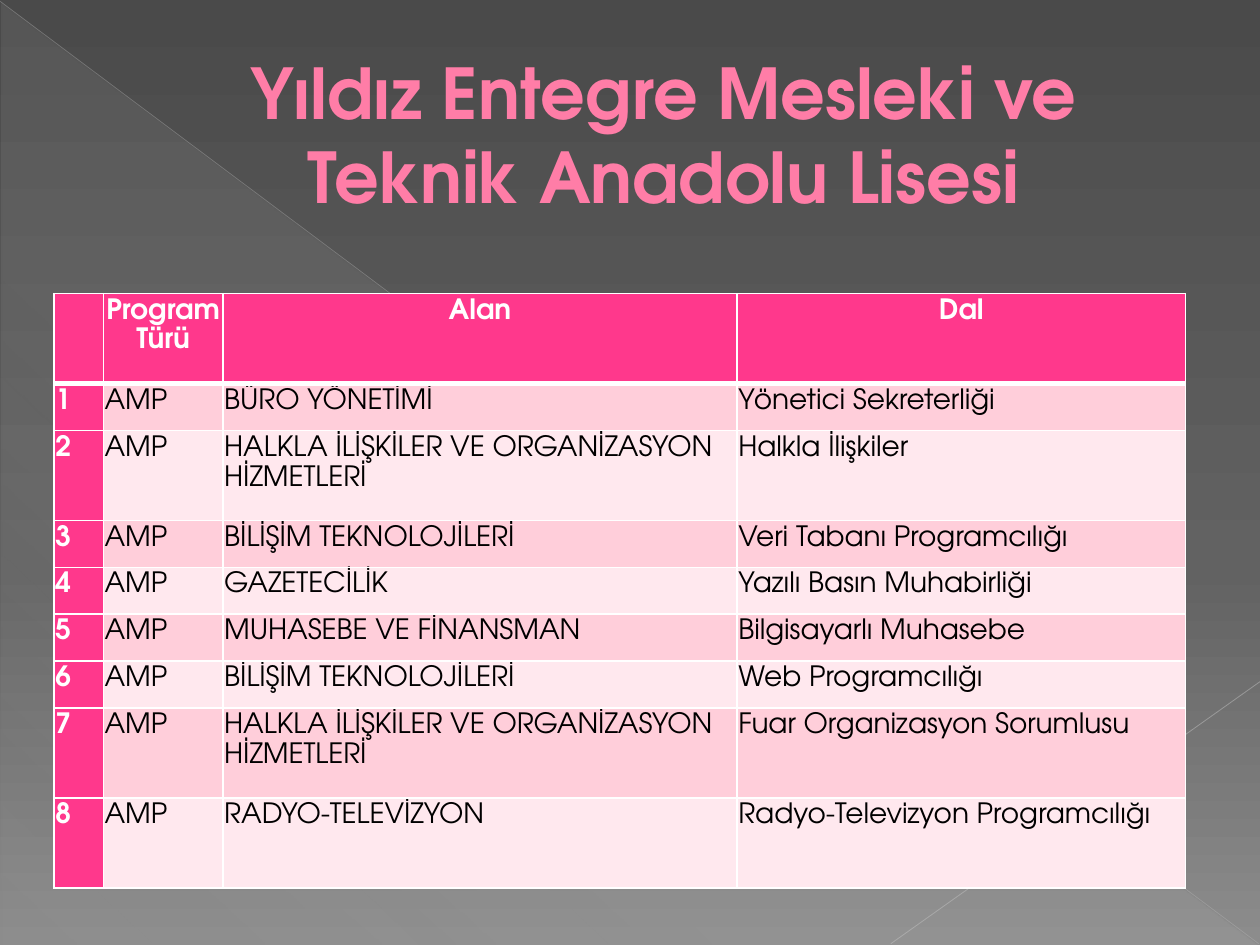
from dataclasses import dataclass

from lxml.etree import SubElement
from pptx import Presentation
from pptx.dml.color import RGBColor
from pptx.enum.shapes import MSO_CONNECTOR, MSO_SHAPE
from pptx.enum.text import MSO_ANCHOR, PP_ALIGN
from pptx.oxml.ns import qn
from pptx.util import Inches, Pt

FONT = "TeX Gyre Adventor"
WHITE, BLACK, PINK = "FFFFFF", "000000", "FF388C"
BANDS = ["FFCEDA", "FFE8EE"]
COLUMN_WIDTHS = [0.39, 0.95, 4.08, 3.56]
TABLE_HEIGHT = 4.72
SHORT_ROW, TALL_ROW = 0.37, 0.71
HEADINGS = ["", "Program Türü", "Alan", "Dal"]


@dataclass
class Program:
    field: str
    branch: str
    height: float = SHORT_ROW


@dataclass
class Ray:
    x1: float
    y1: float
    x2: float
    y2: float
    color: str
    width: float
    opacity: int


@dataclass
class Stop:
    position: int
    color: str
    opacity: int = 100


PROGRAMS = [
    Program("BÜRO YÖNETİMİ", "Yönetici Sekreterliği"),
    Program("HALKLA İLİŞKİLER VE ORGANİZASYON HİZMETLERİ", "Halkla İlişkiler", TALL_ROW),
    Program("BİLİŞİM TEKNOLOJİLERİ", "Veri Tabanı Programcılığı"),
    Program("GAZETECİLİK", "Yazılı Basın Muhabirliği"),
    Program("MUHASEBE VE FİNANSMAN", "Bilgisayarlı Muhasebe"),
    Program("BİLİŞİM TEKNOLOJİLERİ", "Web Programcılığı"),
    Program("HALKLA İLİŞKİLER VE ORGANİZASYON HİZMETLERİ", "Fuar Organizasyon Sorumlusu", TALL_ROW),
    Program("RADYO-TELEVİZYON", "Radyo-Televizyon Programcılığı", TALL_ROW),
]
RAYS = [
    Ray(0, 0.01, 9.99, 7.49, "BFBFBF", 0.39, 35),
    Ray(10, 5.41, 7.07, 7.49, "C6C6C6", 0.47, 45),
]
BACKGROUND = [Stop(0, "4A4A4A"), Stop(60, "626262"), Stop(100, "8C8C8C")]
SHEEN = [Stop(0, "D2D2D2", 10), Stop(70, "D2D2D2", 8), Stop(100, "D2D2D2", 1)]


def rgb(color: str) -> RGBColor:
    return RGBColor.from_string(color)


def add_color(parent, color: str, opacity: int = 100) -> None:
    clr = SubElement(parent, qn("a:srgbClr"), val=color)
    if opacity < 100:
        SubElement(clr, qn("a:alpha"), val=str(opacity * 1000))


def set_gradient(props, stops: list[Stop], angle: int) -> None:
    solid = props.find(qn("a:solidFill"))
    grad = SubElement(props, qn("a:gradFill"), rotWithShape="1")
    stop_list = SubElement(grad, qn("a:gsLst"))
    for stop in stops:
        gs = SubElement(stop_list, qn("a:gs"), pos=str(stop.position * 1000))
        add_color(gs, stop.color, stop.opacity)
    SubElement(grad, qn("a:lin"), ang=str(angle * 60000), scaled="0")
    props.replace(solid, grad)


def add_backdrop(s) -> None:
    s.background.fill.solid()
    set_gradient(s._element.find(".//" + qn("p:bgPr")), BACKGROUND, 90)
    sp = s.shapes.add_shape(
        MSO_SHAPE.RIGHT_TRIANGLE, Inches(0.01), Inches(0.02), Inches(9.98), Inches(7.48)
    )
    sp.shadow.inherit = False
    sp.line.fill.background()
    sp.fill.solid()
    set_gradient(sp._element.spPr, SHEEN, 133)


def add_ray(s, ray: Ray) -> None:
    line = s.shapes.add_connector(
        MSO_CONNECTOR.STRAIGHT, Inches(ray.x1), Inches(ray.y1), Inches(ray.x2), Inches(ray.y2)
    )
    line.line.color.rgb = rgb(ray.color)
    line.line.width = Pt(ray.width)
    clr = line._element.spPr.find(".//" + qn("a:srgbClr"))
    SubElement(clr, qn("a:alpha"), val=str(ray.opacity * 1000))
    SubElement(line._element.spPr, qn("a:effectLst"))


def format_run(r, size: float, color: str, bold: bool) -> None:
    r.font.name = FONT
    r.font.size = Pt(size)
    r.font.bold = bold
    r.font.color.rgb = rgb(color)


def add_title(s, text: str) -> None:
    sp = s.shapes.add_textbox(Inches(0.5), Inches(0.29), Inches(9), Inches(1.54))
    tf = sp.text_frame
    tf.word_wrap = True
    tf.vertical_anchor = MSO_ANCHOR.MIDDLE
    tf.text = text
    p = tf.paragraphs[0]
    p.alignment = PP_ALIGN.CENTER
    p._p.get_or_add_pPr().set("marL", str(Inches(0.53)))
    r = p.runs[0]
    format_run(r, 40, "FF7DA7", True)
    outline = SubElement(r._r.rPr, qn("a:ln"), w=str(Pt(0.5)))
    add_color(SubElement(outline, qn("a:solidFill")), "B12761")
    r._r.rPr.insert(0, outline)


def set_borders(cell, top: float, bottom: float) -> None:
    props = cell._tc.get_or_add_tcPr()
    for side, width in (("L", 1), ("R", 1), ("T", top), ("B", bottom)):
        line = SubElement(props, qn(f"a:ln{side}"), w=str(Pt(width)))
        add_color(SubElement(line, qn("a:solidFill")), WHITE)


def fill_cell(cell, text: str, row: int, column: int) -> None:
    accent = row == 0 or column == 0
    set_borders(cell, 3 if row == 1 else 1, 3 if row == 0 else 1)
    cell.fill.solid()
    cell.fill.fore_color.rgb = rgb(PINK if accent else BANDS[(row - 1) % 2])
    cell.margin_left = cell.margin_right = Inches(0.01)
    cell.margin_top = cell.margin_bottom = Inches(0.01)
    cell.text_frame.text = text
    p = cell.text_frame.paragraphs[0]
    p.line_spacing = 1.15
    p.alignment = PP_ALIGN.CENTER if row == 0 else PP_ALIGN.LEFT
    for r in p.runs:
        format_run(r, 16, WHITE if accent else BLACK, accent)


def add_program_table(s) -> None:
    rows = [HEADINGS] + [
        [str(number), "AMP", program.field, program.branch]
        for number, program in enumerate(PROGRAMS, 1)
    ]
    heights = [TALL_ROW] + [program.height for program in PROGRAMS]
    stretch = TABLE_HEIGHT / sum(heights)
    table = s.shapes.add_table(
        len(rows), len(HEADINGS), Inches(0.43), Inches(2.33),
        Inches(sum(COLUMN_WIDTHS)), Inches(TABLE_HEIGHT),
    ).table
    table.first_col = True
    for column, width in zip(table.columns, COLUMN_WIDTHS):
        column.width = Inches(width)
    for i, (texts, height) in enumerate(zip(rows, heights)):
        table.rows[i].height = Inches(height * stretch)
        for j, text in enumerate(texts):
            fill_cell(table.cell(i, j), text, i, j)


def main() -> None:
    prs = Presentation()
    prs.slide_width, prs.slide_height = Inches(10), Inches(7.5)
    s = prs.slides.add_slide(prs.slide_layouts[6])
    add_backdrop(s)
    for ray in RAYS:
        add_ray(s, ray)
    add_title(s, "Yıldız Entegre Mesleki ve Teknik Anadolu Lisesi")
    add_program_table(s)
    prs.save("out.pptx")


if __name__ == "__main__":
    main()
